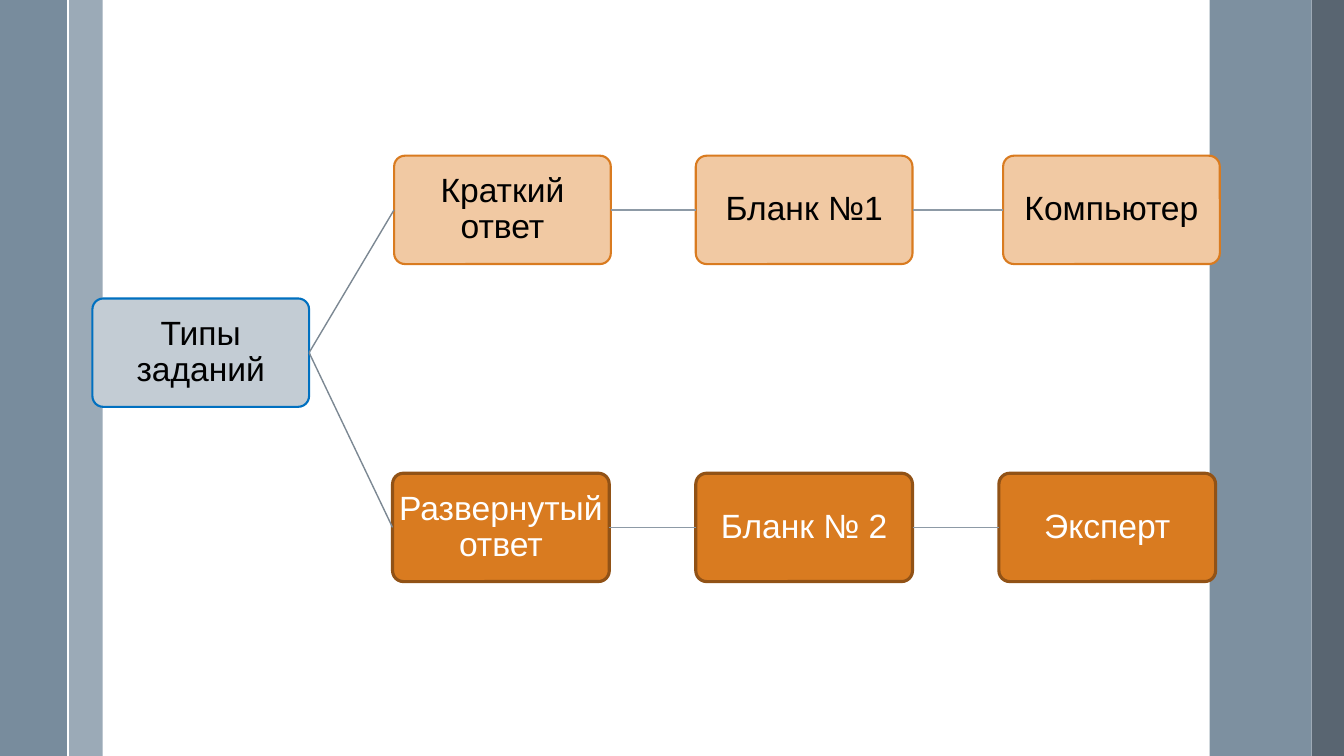
from lxml import etree
from pptx import Presentation
from pptx.dml.color import RGBColor
from pptx.enum.shapes import MSO_CONNECTOR, MSO_SHAPE
from pptx.enum.text import MSO_ANCHOR, PP_ALIGN
from pptx.oxml.ns import qn
from pptx.util import Pt

COLORS = {
    "pale": "9BAAB7", "slate": "6A8093", "dark": "475562",
    "white": "FFFFFF", "black": "000000",
    "gray": "C3CCD4", "blue": "0070C0",
    "peach": "F1C9A3", "orange": "D97B20", "brown": "915216",
    "branch": "7C8893", "link": "8D9AA6",
}
W, H = 960, 540
BOX_W, BOX_H = 154.8, 77.4


def add_box(kind, x, y, w, h, fill):
    sp = s.shapes.add_shape(kind, Pt(x), Pt(y), Pt(w), Pt(h))
    sp.shadow.inherit = False
    sp.fill.solid()
    sp.fill.fore_color.rgb = RGBColor.from_string(COLORS[fill])
    sp.line.fill.background()
    return sp


def add_line(x1, y1, x2, y2, color, width):
    c = s.shapes.add_connector(MSO_CONNECTOR.STRAIGHT, Pt(x1), Pt(y1), Pt(x2), Pt(y2))
    c.line.color.rgb = RGBColor.from_string(COLORS[color])
    c.line.width = Pt(width)
    etree.SubElement(c._element.spPr, qn("a:effectLst"))
    return c


prs = Presentation()
prs.slide_width, prs.slide_height = Pt(W), Pt(H)
s = prs.slides.add_slide(prs.slide_layouts[6])

# Side bands: left, width, colour, opacity in percent
for x, w, color, opacity in [
    (49, 24.3, "pale", 100),
    (0, 48.3, "slate", 90),
    (864, 73, "slate", 87),
    (937, 23, "dark", 90),
]:
    band = add_box(MSO_SHAPE.RECTANGLE, x, 0, w, H, color)
    if opacity < 100:
        clr = band._element.spPr.find(qn("a:solidFill"))[0]
        etree.SubElement(clr, qn("a:alpha"), val=str(opacity * 1000))
add_line(48.5, 0, 48.5, H, "white", 1.5)

# Tree boxes: text, left, top, fill, outline, outline width, text colour
SHORT = (111.2, "peach", "orange", 1.5, "black")
LONG = (338, "orange", "brown", 2.25, "white")
nodes = {}
for text, x, y, fill, outline, width, color in [
    ("Типы заданий", 66, 213.2, "gray", "blue", 1.5, "black"),
    ("Краткий ответ", 281.5, *SHORT),
    ("Бланк №1", 497, *SHORT),
    ("Компьютер", 716.5, *SHORT),
    ("Развернутый ответ", 280.4, *LONG),
    ("Бланк № 2", 497, *LONG),
    ("Эксперт", 713.5, *LONG),
]:
    sp = add_box(MSO_SHAPE.ROUNDED_RECTANGLE, x, y, BOX_W, BOX_H, fill)
    sp.adjustments[0] = 0.1
    sp.line.color.rgb = RGBColor.from_string(COLORS[outline])
    sp.line.width = Pt(width)
    tf = sp.text_frame
    tf.word_wrap = True
    tf.vertical_anchor = MSO_ANCHOR.MIDDLE
    tf.margin_left = tf.margin_right = tf.margin_top = tf.margin_bottom = Pt(1.2)
    p = tf.paragraphs[0]
    p.alignment = PP_ALIGN.CENTER
    p.line_spacing = 0.9
    r = p.add_run()
    r.text = text
    r.font.name = "Arial"
    r.font.size = Pt(24)
    r.font.color.rgb = RGBColor.from_string(COLORS[color])
    nodes[text] = sp

# Links from the right side of one box to the left side of the next
for start, end, color in [
    ("Типы заданий", "Краткий ответ", "branch"),
    ("Краткий ответ", "Бланк №1", "link"),
    ("Бланк №1", "Компьютер", "link"),
    ("Типы заданий", "Развернутый ответ", "branch"),
    ("Развернутый ответ", "Бланк № 2", "link"),
    ("Бланк № 2", "Эксперт", "link"),
]:
    c = add_line(0, 0, 0, 0, color, 1)
    c.begin_connect(nodes[start], 3)
    c.end_connect(nodes[end], 1)

prs.save("out.pptx")
